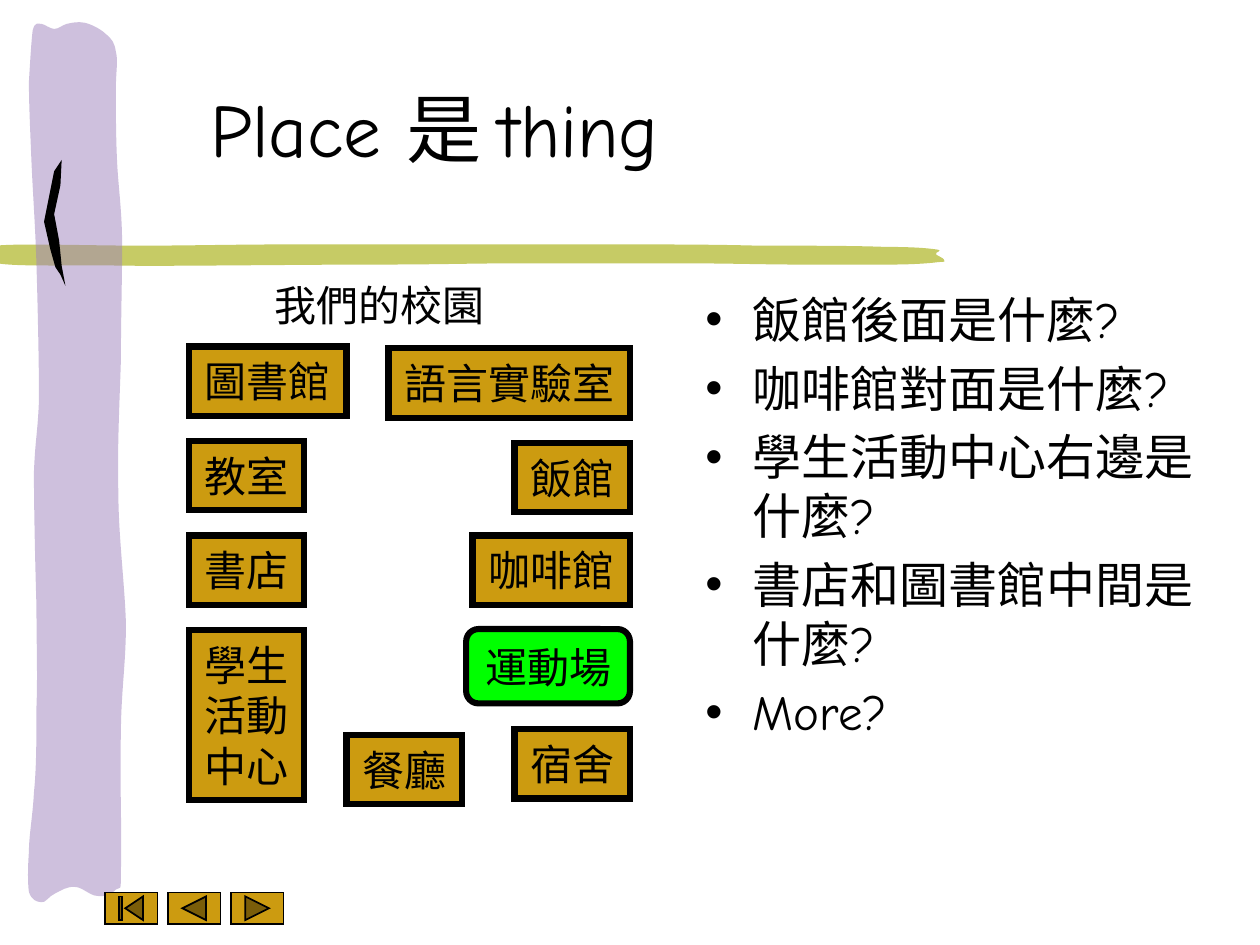
from dataclasses import dataclass

from lxml import etree
from pptx import Presentation
from pptx import util as u
from pptx.dml.color import RGBColor
from pptx.enum import shapes, text
from pptx.oxml.ns import qn


@dataclass(frozen=True)
class Theme:
    font: str = "Comic Neue"
    ink: str = "000000"
    gold: str = "CC9B10"
    field: str = "00FF00"
    olive: str = "C6CB65"
    purple: str = "9F83BD"
    title: int = 43
    body: int = 28
    label: int = 24


T = Theme()
KIND = shapes.MSO_SHAPE

TITLE = "\tPlace 是 thing"
MAP_TITLE = "我們的校園"
QUESTIONS = ["飯館後面是什麼?", "咖啡館對面是什麼?", "學生活動中心右邊是什麼?",
             "書店和圖書館中間是什麼?", "More?"]

# Campus map: (lines of the name, map column, map row)
PLACES = [
    (["圖書館"], "west", 0), (["語言實驗室"], "east", 0.02),
    (["教室"], "west", 1), (["飯館"], "east", 1.02),
    (["書店"], "west", 2), (["咖啡館"], "east", 2),
    (["學生", "活動", "中心"], "west", 3), (["運動場"], "east", 2.99),
    (["餐廳"], "middle", 4.11), (["宿舍"], "east", 4.05),
]
SPORTS_FIELD = "運動場"
WEST, MIDDLE, EAST_EDGE = 1.5, 2.75, 5
MAP_TOP, ROW = 2.75, 0.75
CHAR_W, LINE_H, PAD_X, PAD_Y = 1 / 3, 0.4, 0.25, 0.15

BUTTONS = [KIND.ACTION_BUTTON_BEGINNING, KIND.ACTION_BUTTON_BACK_OR_PREVIOUS,
           KIND.ACTION_BUTTON_FORWARD_OR_NEXT]
CELL = 1 / 12  # grid of the button row

# Outlines: a pair is a straight step, six numbers are a Bezier step.
OLIVE_STROKE = [
    (6.01, 1.95), (6.36, 1.95, 6.78, 1.95, 7.02, 1.96),
    (7.25, 1.96, 7.36, 1.97, 7.43, 1.98), (7.5, 1.99, 7.41, 2, 7.43, 2.02),
    (7.44, 2.03, 7.49, 2.05, 7.49, 2.06), (7.49, 2.07, 7.52, 2.08, 7.45, 2.08),
    (7.38, 2.09, 7.24, 2.1, 7.06, 2.1), (6.88, 2.1, 6.63, 2.1, 6.35, 2.1),
    (6.08, 2.1, 5.77, 2.09, 5.41, 2.09), (5.04, 2.09, 4.55, 2.09, 4.14, 2.09),
    (3.74, 2.09, 3.49, 2.1, 2.98, 2.1), (2.48, 2.1, 1.62, 2.11, 1.11, 2.11),
    (0.61, 2.1, 0.16, 2.12, -0.02, 2.09), (-0.03, 1.95),
    (0.16, 1.93, 0.72, 1.95, 1.11, 1.95), (1.51, 1.95, 1.85, 1.94, 2.32, 1.94),
    (2.78, 1.94, 3.48, 1.94, 3.91, 1.94), (4.34, 1.94, 4.55, 1.94, 4.89, 1.94),
    (5.24, 1.94, 5.66, 1.94, 6.01, 1.95),
]
PURPLE_STROKE = [
    (0.29, 5.61), (0.3, 5.37, 0.29, 5.12, 0.29, 4.81),
    (0.28, 4.5, 0.27, 4.03, 0.27, 3.75), (0.28, 3.48, 0.3, 3.44, 0.31, 3.17),
    (0.31, 2.89, 0.3, 2.42, 0.29, 2.1), (0.28, 1.78, 0.26, 1.52, 0.25, 1.27),
    (0.24, 1.03, 0.23, 0.82, 0.23, 0.65), (0.24, 0.48, 0.25, 0.32, 0.26, 0.24),
    (0.28, 0.17, 0.3, 0.19, 0.33, 0.19), (0.35, 0.19, 0.4, 0.23, 0.43, 0.23),
    (0.47, 0.23, 0.49, 0.2, 0.53, 0.19), (0.57, 0.18, 0.62, 0.17, 0.67, 0.18),
    (0.72, 0.19, 0.8, 0.23, 0.84, 0.27), (0.89, 0.31, 0.91, 0.34, 0.92, 0.41),
    (0.94, 0.48, 0.92, 0.57, 0.92, 0.71), (0.92, 0.86, 0.92, 1.08, 0.93, 1.29),
    (0.94, 1.49, 0.97, 1.68, 0.97, 1.95), (0.97, 2.21, 0.96, 2.54, 0.96, 2.86),
    (0.95, 3.19, 0.93, 3.56, 0.94, 3.91), (0.94, 4.25, 0.99, 4.63, 1, 4.95),
    (1, 5.27, 0.96, 5.5, 0.96, 5.83), (0.95, 6.15, 0.97, 6.69, 0.96, 6.9),
    (0.96, 7.1, 0.96, 7.03, 0.92, 7.06), (0.89, 7.1, 0.83, 7.12, 0.77, 7.11),
    (0.72, 7.11, 0.65, 7.04, 0.6, 7.04), (0.54, 7.03, 0.48, 7.07, 0.44, 7.09),
    (0.39, 7.11, 0.36, 7.17, 0.33, 7.16), (0.29, 7.16, 0.25, 7.14, 0.23, 7.08),
    (0.22, 7.01, 0.22, 6.89, 0.23, 6.76), (0.23, 6.63, 0.26, 6.48, 0.27, 6.29),
    (0.29, 6.1, 0.29, 5.86, 0.29, 5.61),
]
BLACK_FLECK = [
    (0.49, 1.27), (0.48, 1.47), (0.43, 1.7), (0.47, 1.91), (0.49, 2.11),
    (0.52, 2.27), (0.48, 2.18), (0.44, 2.12), (0.4, 1.98), (0.35, 1.76),
    (0.39, 1.56), (0.43, 1.36), (0.49, 1.27),
]


def paint(sp, fill, line=None, alpha=None):
    sp.shadow.inherit = False
    sp.fill.solid()
    sp.fill.fore_color.rgb = RGBColor.from_string(fill)
    if alpha:
        color = sp.fill._xPr.find(".//" + qn("a:srgbClr"))
        etree.SubElement(color, qn("a:alpha")).set("val", str(alpha * 1000))
    if line:
        sp.line.color.rgb = RGBColor.from_string(T.ink)
        sp.line.width = u.Pt(line)
        ln = sp._element.spPr.find(qn("a:ln"))
        etree.SubElement(ln, qn("a:miter")).set("lim", "800000")
    else:
        sp.line.fill.background()


def add_brush(s, outline, fill, alpha=None):
    """Join the end points of the steps, then bend the Bezier steps."""
    start, *rest = [tuple(map(u.Inches, step[-2:])) for step in outline]
    builder = s.shapes.build_freeform(*start, scale=1.0)
    builder.add_line_segments(rest, close=True)
    sp = builder.convert_to_shape()
    segments = list(sp._element.iter(qn("a:lnTo")))
    for segment, step in zip(segments, outline[1:]):
        if len(step) == 6:
            segment.tag = qn("a:cubicBezTo")
            for i, (x, y) in enumerate((step[:2], step[2:4])):
                pt = etree.Element(qn("a:pt"))
                pt.set("x", str(u.Inches(x) - sp.left))
                pt.set("y", str(u.Inches(y) - sp.top))
                segment.insert(i, pt)
    paint(sp, fill, alpha=alpha)


def add_preset(s, kind, box, fill, line):
    sp = s.shapes.add_shape(kind, *map(u.Inches, box))
    paint(sp, fill, line)
    return sp


def add_bullet(p):
    pPr = p._p.get_or_add_pPr()
    indent = u.Inches(3 / 8)
    pPr.set("marL", str(indent))
    pPr.set("indent", str(-indent))
    etree.SubElement(pPr, qn("a:buFont")).set("typeface", "Arial")
    etree.SubElement(pPr, qn("a:buChar")).set("char", "•")


def add_tab_stop(p, inches):
    stops = etree.SubElement(p._p.get_or_add_pPr(), qn("a:tabLst"))
    stop = etree.SubElement(stops, qn("a:tab"))
    stop.set("pos", str(u.Inches(inches)))
    stop.set("algn", "l")


def write(sp, lines, size, align=text.PP_ALIGN.LEFT, anchor=text.MSO_ANCHOR.TOP,
          wrap=True, grow=False, bullets=False, gap=0, tab=None):
    tf = sp.text_frame
    tf.word_wrap = wrap
    tf.vertical_anchor = anchor
    tf.auto_size = (text.MSO_AUTO_SIZE.SHAPE_TO_FIT_TEXT if grow
                    else text.MSO_AUTO_SIZE.NONE)
    for i, line in enumerate(lines):
        p = tf.add_paragraph() if i else tf.paragraphs[0]
        p.alignment = align
        if bullets:
            add_bullet(p)
        if tab:
            add_tab_stop(p, tab)
        if i and gap:
            p.space_before = u.Pt(gap)
        r = p.add_run()
        r.text = line
        r.font.name, r.font.size = T.font, u.Pt(size)
        r.font.color.rgb = RGBColor.from_string(T.ink)


def add_text(s, box, lines, size, **style):
    write(s.shapes.add_textbox(*map(u.Inches, box)), lines, size, **style)


def add_place(s, lines, column, row):
    w = max(map(len, lines)) * CHAR_W + PAD_X
    h = len(lines) * LINE_H + PAD_Y
    kind, fill = KIND.RECTANGLE, T.gold
    if lines == [SPORTS_FIELD]:
        kind, fill = KIND.ROUNDED_RECTANGLE, T.field
        w, h = w + 0.05, h + 0.04
    x = {"west": WEST, "middle": MIDDLE, "east": EAST_EDGE - w}[column]
    sp = add_preset(s, kind, (x, MAP_TOP + row * ROW, w, h), fill, 3.5)
    write(sp, lines, T.label, align=text.PP_ALIGN.CENTER,
          anchor=text.MSO_ANCHOR.MIDDLE, wrap=False, grow=True)


def main():
    prs = Presentation()
    prs.slide_width, prs.slide_height = u.Inches(10), u.Inches(7.5)
    s = prs.slides.add_slide(prs.slide_layouts[6])
    add_brush(s, OLIVE_STROKE, T.olive)
    add_brush(s, PURPLE_STROKE, T.purple, alpha=50)
    add_brush(s, BLACK_FLECK, T.ink)
    for i, kind in enumerate(BUTTONS):
        box = [n * CELL for n in (10 + 6 * i, 85, 5, 3)]
        add_preset(s, kind, box, T.gold, 1)
    add_text(s, (0.57, 0.6, 9.4, 0.82), [TITLE], T.title,
             anchor=text.MSO_ANCHOR.MIDDLE, grow=True, tab=1)
    add_text(s, (5.5, 2.25, 4.17, 4.5), QUESTIONS, T.body,
             bullets=True, gap=T.body * 0.2)
    for place in PLACES:
        add_place(s, *place)
    add_text(s, (2.08, 2.17, 1.87, 0.5), [MAP_TITLE], T.label, wrap=False, grow=True)
    prs.save("out.pptx")


if __name__ == "__main__":
    main()
